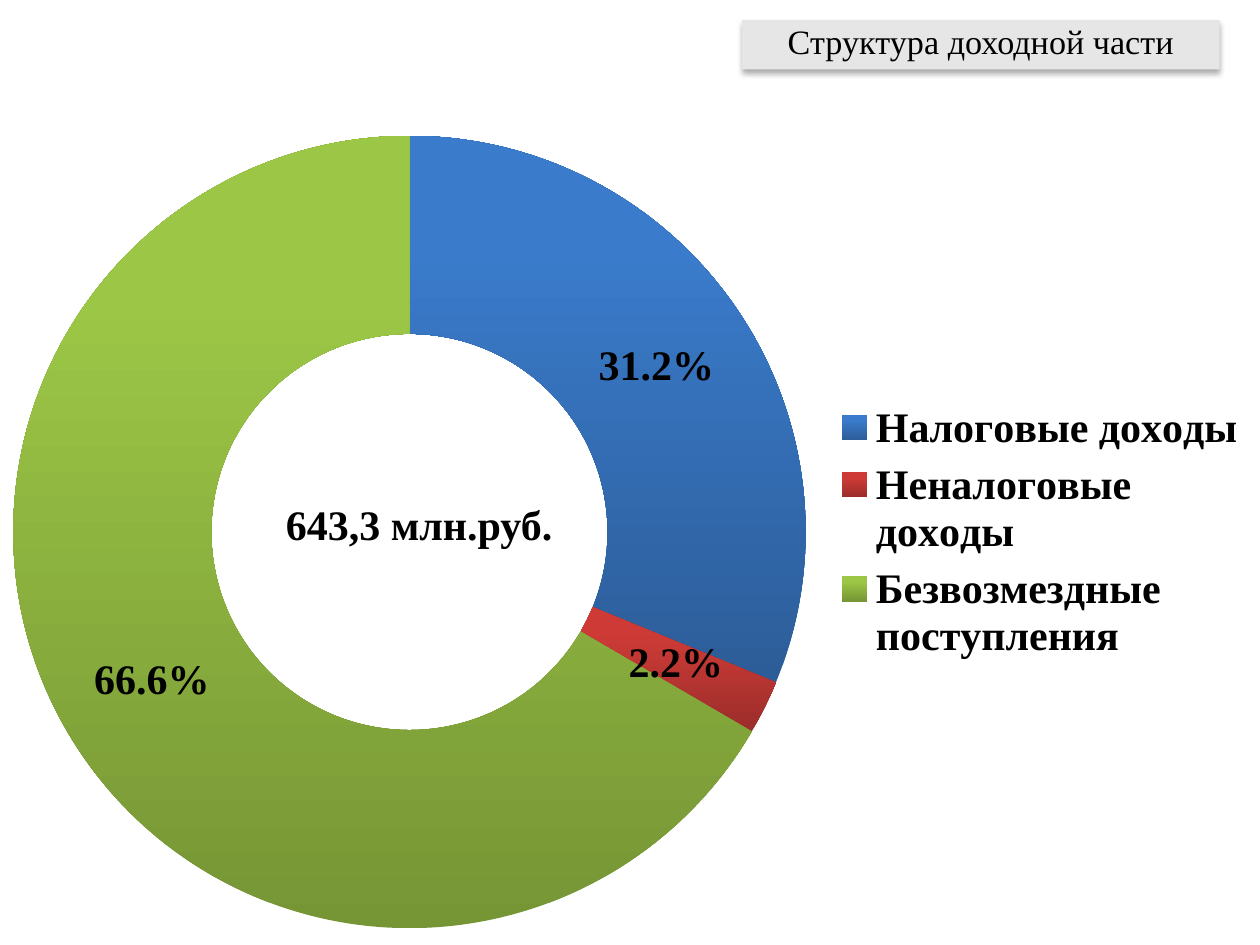
import pptx
import pptx.chart.data
import pptx.dml.color
import pptx.enum.chart
import pptx.enum.shapes
import pptx.enum.text
import pptx.oxml
import pptx.oxml.ns
import pptx.util

Inches = pptx.util.Inches
Pt = pptx.util.Pt
RGBColor = pptx.dml.color.RGBColor

FONT = "Times New Roman"
BLACK = RGBColor(0x00, 0x00, 0x00)
GRAY = RGBColor(0xE6, 0xE6, 0xE6)

# Name, share, dark foot and bright top of each slice
PARTS = [
    ("Налоговые доходы", 31.2, RGBColor(0x2C, 0x5D, 0x98), RGBColor(0x3A, 0x7B, 0xCB)),
    ("Неналоговые доходы", 2.2, RGBColor(0x9B, 0x2D, 0x2A), RGBColor(0xCE, 0x3B, 0x37)),
    ("Безвозмездные поступления", 66.6, RGBColor(0x76, 0x95, 0x35), RGBColor(0x9C, 0xC7, 0x46)),
]


def style(font, size, bold=False):
    font.name = FONT
    font.size = Pt(size)
    font.bold = bold
    font.color.rgb = BLACK


def layout(x, y, wide, high, inner=False):
    """Manual chart layout, in fractions of the chart box."""
    target = '<c:layoutTarget val="inner"/>' if inner else ""
    return pptx.oxml.parse_xml(
        f'<c:layout {pptx.oxml.ns.nsdecls("c")}><c:manualLayout>{target}'
        '<c:xMode val="edge"/><c:yMode val="edge"/>'
        f'<c:x val="{x}"/><c:y val="{y}"/><c:w val="{wide}"/><c:h val="{high}"/>'
        '</c:manualLayout></c:layout>'
    )


def add_title(slide, box):
    shape = slide.shapes.add_shape(pptx.enum.shapes.MSO_SHAPE.RECTANGLE, *box)
    shape.fill.solid()
    shape.fill.fore_color.rgb = GRAY
    shape.line.fill.background()

    # Soft shadow below the title
    shape.shadow.inherit = False
    effects = shape.element.spPr.find(pptx.oxml.ns.qn("a:effectLst"))
    effects.append(pptx.oxml.parse_xml(
        f'<a:outerShdw {pptx.oxml.ns.nsdecls("a")} blurRad="{Pt(3.5)}" dist="{Pt(2.2)}" '
        'dir="5400000" rotWithShape="0"><a:srgbClr val="000000">'
        '<a:alpha val="32000"/></a:srgbClr></a:outerShdw>'
    ))

    frame = shape.text_frame
    frame.word_wrap = True
    frame.vertical_anchor = pptx.enum.text.MSO_ANCHOR.MIDDLE
    line = frame.paragraphs[0]
    line.text = "Структура доходной части"
    line.alignment = pptx.enum.text.PP_ALIGN.CENTER
    line.line_spacing = 0.8
    style(line.font, 19.5)


def add_total(slide, box):
    frame = slide.shapes.add_textbox(*box).text_frame
    frame.word_wrap = True
    frame.auto_size = pptx.enum.text.MSO_AUTO_SIZE.SHAPE_TO_FIT_TEXT
    line = frame.paragraphs[0]
    line.text = "643,3 млн.руб."
    style(line.font, 24, True)


def add_ring(slide, box):
    data = pptx.chart.data.CategoryChartData()
    data.categories = [part[0] for part in PARTS]
    data.add_series("Series 1", [part[1] for part in PARTS])
    chart = slide.shapes.add_chart(
        pptx.enum.chart.XL_CHART_TYPE.DOUGHNUT, *box, data).chart
    chart.has_title = False
    style(chart.font, 24, True)

    # Slices shade from foot to top
    plot = chart.plots[0]
    plot.vary_by_categories = True
    for index, (_, _, foot, top) in enumerate(PARTS):
        fill = plot.series[0].points[index].format.fill
        fill.gradient()
        fill.gradient_angle = 90
        for stop, place, color in zip(fill.gradient_stops, (0, 0.8), (foot, top)):
            stop.position = place
            stop.color.rgb = color

    # Percent labels
    plot.has_data_labels = True
    labels = plot.data_labels
    labels.show_percentage = True
    labels.show_value = False
    labels.number_format = "0.0%"
    labels.number_format_is_linked = False
    style(labels.font, 24, True)

    # Legend
    chart.has_legend = True
    legend = chart.legend
    legend.position = pptx.enum.chart.XL_LEGEND_POSITION.RIGHT
    legend.include_in_layout = False
    style(legend.font, 24, True)

    # Places of ring and legend
    qn = pptx.oxml.ns.qn
    root = chart.element
    area = next(root.iter(qn("c:plotArea")))
    key = next(root.iter(qn("c:legend")))
    for node in (area, key):
        for old in node.findall(qn("c:layout")):
            node.remove(old)
    area.insert(0, layout(0.01, 0.03, 0.63, 0.95, True))
    key.find(qn("c:legendPos")).addnext(layout(0.66, 0.34, 0.33, 0.33))


def main():
    deck = pptx.Presentation()
    deck.slide_width = Inches(10)
    deck.slide_height = Inches(7.5)
    slide = deck.slides.add_slide(deck.slide_layouts[6])
    add_title(slide, [Inches(n) for n in (5.89, 0.16, 3.79, 0.39)])
    add_total(slide, [Inches(n) for n in (2.17, 3.91, 2.99, 0.5)])
    add_ring(slide, [Inches(n) for n in (0, 0.88, 10, 6.62)])
    deck.save("out.pptx")


if __name__ == "__main__":
    main()
